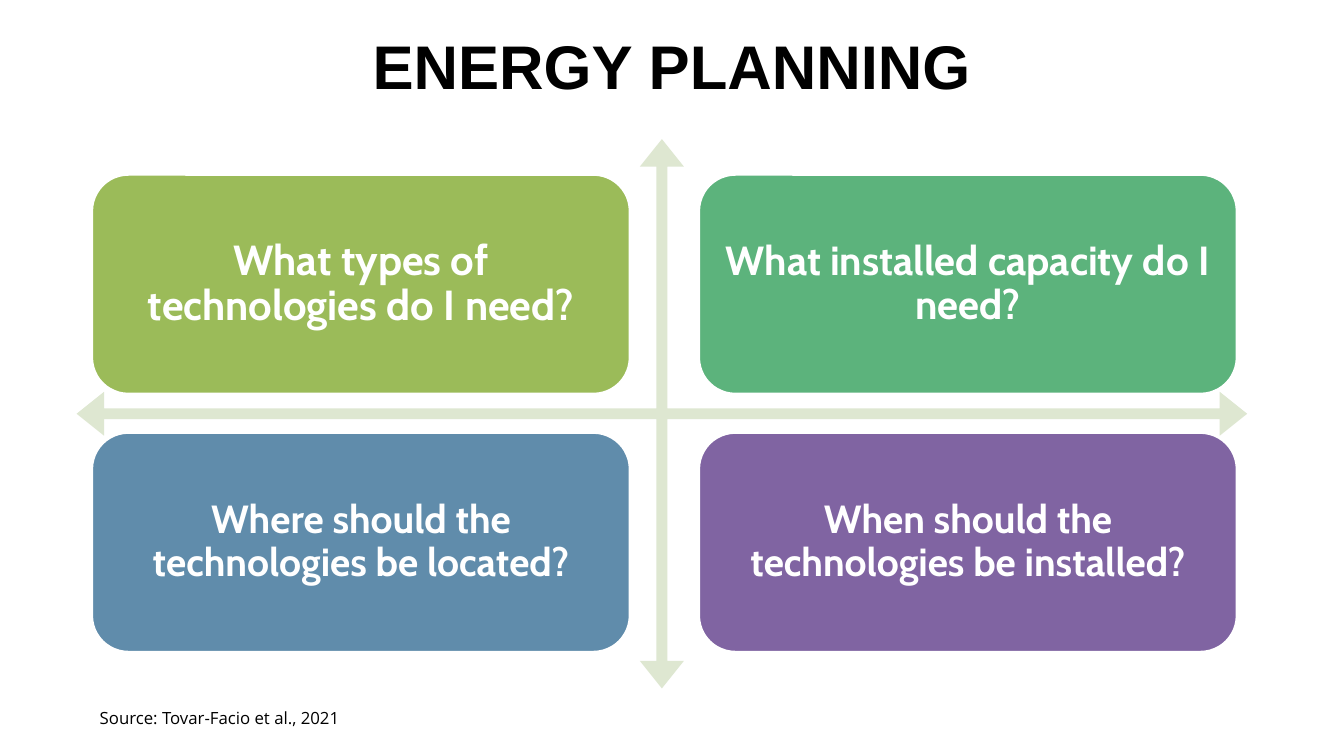
import pptx
import pptx.util
import pptx.dml.color
import pptx.enum.shapes
import pptx.enum.text

Inches = pptx.util.Inches
Pt = pptx.util.Pt
SHAPES = pptx.enum.shapes.MSO_SHAPE
ALIGN = pptx.enum.text.PP_ALIGN
ANCHOR = pptx.enum.text.MSO_ANCHOR

# Content
TITLE = "ENERGY PLANNING"
SOURCE = "Source: Tovar-Facio et al., 2021"
QUESTIONS = [  # wording, fill, text size; row by row
    ("What types of technologies do I need?", "9BBB59", 30),
    ("What installed capacity do I need?", "5CB37C", 29),
    ("Where should the technologies be located?", "608CAB", 28),
    ("When should the technologies be installed?", "8064A2", 28),
]

# Layout in inches
TITLE_BOX = (2.08, 0.23, 9.17, 0.44)
SOURCE_BOX = (0.89, 6.96, 3.58, 0.31)
AXES_BOX = (0.76, 1.38, 11.61, 5.45)
AXES_PROPORTIONS = (0.02, 0.04, 0.05)
CARD_LEFT, CARD_TOP = 0.91, 1.73
CARD_WIDTH, CARD_HEIGHT = 5.34, 2.18
COLUMN_STEP, ROW_STEP = 6.02, 2.56
CARD_INSET = 0.11

# Text formats
TITLE_FONT = {"name": "Arial", "size": Pt(44), "bold": True}
SOURCE_FONT = {"name": "Open Sans", "size": Pt(12), "bold": False}
CARD_FONT = {"name": "Cabin", "bold": True}
CARD_FRAME = {
    "word_wrap": True,
    "vertical_anchor": ANCHOR.MIDDLE,
    **{f"margin_{side}": Inches(CARD_INSET) for side in ("left", "top", "right", "bottom")},
}
TEXT_FRAME = {"word_wrap": True, "vertical_anchor": ANCHOR.TOP}


def set_all(target, values):
    for name, value in values.items():
        setattr(target, name, value)


def color(hex_string):
    return pptx.dml.color.RGBColor.from_string(hex_string)


def write(owner, wording, font, font_color, frame, paragraph_format):
    set_all(owner.text_frame, frame)
    paragraph = owner.text_frame.paragraphs[0]
    set_all(paragraph, paragraph_format)
    run = paragraph.add_run()
    run.text = wording
    set_all(run.font, font)
    run.font.color.rgb = color(font_color)


def add_filled(slide, preset, box, fill):
    shape = slide.shapes.add_shape(preset, *map(Inches, box))
    shape.shadow.inherit = False
    shape.fill.solid()
    shape.fill.fore_color.rgb = color(fill)
    return shape


def main():
    deck = pptx.Presentation()
    set_all(deck, {"slide_width": Inches(13.33), "slide_height": Inches(7.5)})
    slide = deck.slides.add_slide(deck.slide_layouts[6])

    # Title
    title = slide.shapes.add_textbox(*map(Inches, TITLE_BOX))
    write(title, TITLE, TITLE_FONT, "000000", TEXT_FRAME, {"alignment": ALIGN.CENTER})

    # Crossed axes
    axes = add_filled(slide, SHAPES.QUAD_ARROW, AXES_BOX, "DEE7D1")
    axes.line.fill.background()
    for index, proportion in enumerate(AXES_PROPORTIONS):
        axes.adjustments[index] = proportion

    # Question cards, two by two
    for index, (question, fill, size) in enumerate(QUESTIONS):
        row, column = divmod(index, 2)
        box = (CARD_LEFT + column * COLUMN_STEP, CARD_TOP + row * ROW_STEP,
               CARD_WIDTH, CARD_HEIGHT)
        card = add_filled(slide, SHAPES.ROUNDED_RECTANGLE, box, fill)
        card.line.color.rgb = color("FFFFFF")
        card.line.width = Pt(2)
        write(card, question, {**CARD_FONT, "size": Pt(size)}, "FFFFFF", CARD_FRAME,
              {"alignment": ALIGN.CENTER, "line_spacing": 0.9})

    # Source note
    source = slide.shapes.add_textbox(*map(Inches, SOURCE_BOX))
    write(source, SOURCE, SOURCE_FONT, "000000", TEXT_FRAME,
          {"line_spacing": 1.07, "space_after": Pt(8)})

    deck.save("out.pptx")


if __name__ == "__main__":
    main()
